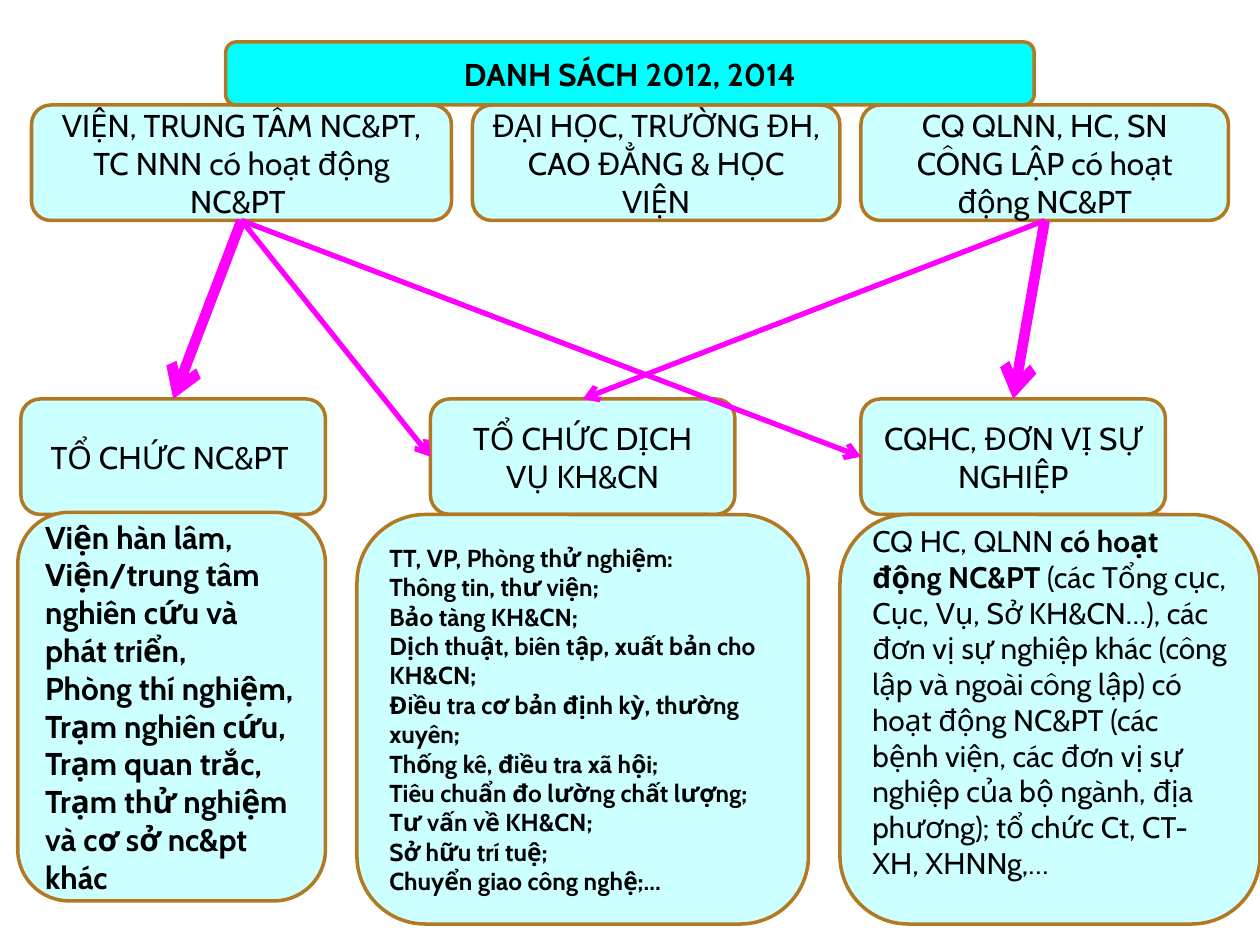
from dataclasses import dataclass

from lxml.etree import SubElement
from pptx import Presentation
from pptx.dml.color import RGBColor
from pptx.enum.shapes import MSO_CONNECTOR as Connector, MSO_SHAPE as Shape
from pptx.enum.text import MSO_ANCHOR as Anchor, PP_ALIGN as Align
from pptx.oxml.ns import qn
from pptx.util import Inches, Pt

TOP, LEFT, BOTTOM = 0, 1, 2


@dataclass(frozen=True)
class Theme:
    font: str = "Cabin"
    text: str = "000000"
    panel: str = "CCFFFF"
    banner: str = "00FFFF"
    border: str = "B27822"
    arrow: str = "FF00FF"
    body: int = 18
    detail: int = 17
    small: int = 14
    border_width: int = 2
    thin: int = 3
    thick: int = 6


class Diagram:
    """Draws on one slide; positions are in cells of a 120 x 90 grid."""

    columns, rows = 120, 90

    def __init__(self, deck, theme):
        self.theme = theme
        self.slide = deck.slides.add_slide(deck.slide_layouts[6])
        self.cell_width = deck.slide_width / self.columns
        self.cell_height = deck.slide_height / self.rows

    def panel(self, column, row, width, height, fill=None):
        box = self.slide.shapes.add_shape(
            Shape.ROUNDED_RECTANGLE,
            round(column * self.cell_width), round(row * self.cell_height),
            round(width * self.cell_width), round(height * self.cell_height))
        box.shadow.inherit = False
        box.fill.solid()
        box.fill.fore_color.rgb = RGBColor.from_string(fill or self.theme.panel)
        box.line.color.rgb = RGBColor.from_string(self.theme.border)
        box.line.width = Pt(self.theme.border_width)
        box.text_frame.word_wrap = True
        box.text_frame.vertical_anchor = Anchor.MIDDLE
        return box

    def add_text(self, box, paragraphs, size, align=Align.LEFT, bold=False):
        """Fill a box; a paragraph is a string or a list of (text, bold) spans."""
        frame = box.text_frame
        for index, content in enumerate(paragraphs):
            para = frame.add_paragraph() if index else frame.paragraphs[0]
            para.alignment = align
            para.font.name = self.theme.font
            para.font.size = Pt(size)
            para.font.bold = bold
            para.font.color.rgb = RGBColor.from_string(self.theme.text)
            spans = [(content, bold)] if isinstance(content, str) else content
            for text, span_bold in spans:
                span = para.add_run()
                span.text = text
                if span_bold != bold:
                    span.font.bold = span_bold

    def heading(self, text, column, row, width, height, fill=None, bold=False):
        box = self.panel(column, row, width, height, fill)
        self.add_text(box, [text], self.theme.body, Align.CENTER, bold)
        return box

    def detail(self, paragraphs, area, size, bold=False):
        box = self.panel(*area)
        self.add_text(box, paragraphs, size, bold=bold)
        return box

    def arrow(self, source, target, side, width):
        """Join the bottom of source to the given side of target."""
        link = self.slide.shapes.add_connector(Connector.STRAIGHT, 0, 0, 0, 0)
        link.begin_connect(source, BOTTOM)
        link.end_connect(target, side)
        link.line.color.rgb = RGBColor.from_string(self.theme.arrow)
        link.line.width = Pt(width)
        properties = link._element.spPr
        SubElement(properties.find(qn("a:ln")), qn("a:tailEnd"), type="arrow")
        SubElement(properties, qn("a:effectLst"))


INSTITUTE_KINDS = [
    "Viện hàn lâm,",
    "Viện/trung tâm nghiên cứu và phát triển,",
    "Phòng thí nghiệm,",
    "Trạm nghiên cứu,",
    "Trạm quan trắc,",
    "Trạm thử nghiệm",
    "và cơ sở nc&pt khác",
]
SERVICE_KINDS = [
    "TT, VP, Phòng thử nghiệm:",
    "Thông tin, thư viện;",
    "Bảo tàng KH&CN;",
    "Dịch thuật, biên tập, xuất bản cho KH&CN;",
    "Điều tra cơ bản định kỳ, thường xuyên;",
    "Thống kê, điều tra xã hội;",
    "Tiêu chuẩn đo lường chất lượng;",
    "Tư vấn về KH&CN;",
    "Sở hữu trí tuệ;",
    "Chuyển giao công nghệ;…",
]
AGENCY_KINDS = [[
    ("CQ HC, QLNN ", False),
    ("có hoạt động NC&PT ", True),
    ("(các Tổng cục, Cục, Vụ, Sở KH&CN…), các đơn vị sự nghiệp khác "
     "(công lập và ngoài công lập) có hoạt động NC&PT (các bệnh viện, "
     "các đơn vị sự nghiệp của bộ ngành, địa phương); "
     "tổ chức Ct, CT-XH, XHNNg,…", False),
]]


def main():
    deck = Presentation()
    deck.slide_width, deck.slide_height = Inches(10), Inches(7.5)
    theme = Theme()
    diagram = Diagram(deck, theme)

    institutes, _, agencies = [
        diagram.heading(text, column, 10, width, 11)
        for text, column, width in (
            ("VIỆN, TRUNG TÂM NC&PT, TC NNN có hoạt động NC&PT ", 3, 40),
            ("ĐẠI HỌC, TRƯỜNG ĐH, CAO ĐẲNG & HỌC VIỆN", 45, 35),
            ("CQ QLNN, HC, SN CÔNG LẬP có hoạt động NC&PT", 82, 35))]
    diagram.heading("DANH SÁCH 2012, 2014", 21.5, 4, 77, 6, theme.banner, True)

    research, services, units = [
        diagram.heading(text, column, 38, 29, 11)
        for text, column in (("TỔ CHỨC NC&PT ", 2),
                             ("TỔ CHỨC DỊCH VỤ KH&CN", 41),
                             ("CQHC, ĐƠN VỊ SỰ NGHIỆP", 82))]

    diagram.detail(SERVICE_KINDS, (34, 49, 43, 39), theme.small, bold=True)
    diagram.detail(INSTITUTE_KINDS, (1.7, 48.8, 29.3, 37), theme.body, bold=True)
    agency_box = diagram.detail(AGENCY_KINDS, (80, 49, 40, 39), theme.detail)
    agency_box.text_frame.margin_bottom = Inches(0.33)

    for source, target, side, width in (
            (institutes, research, TOP, theme.thick),
            (institutes, services, LEFT, theme.thin),
            (institutes, units, LEFT, theme.thin),
            (agencies, units, TOP, theme.thick),
            (agencies, services, TOP, theme.thin)):
        diagram.arrow(source, target, side, width)

    deck.save("out.pptx")


if __name__ == "__main__":
    main()
